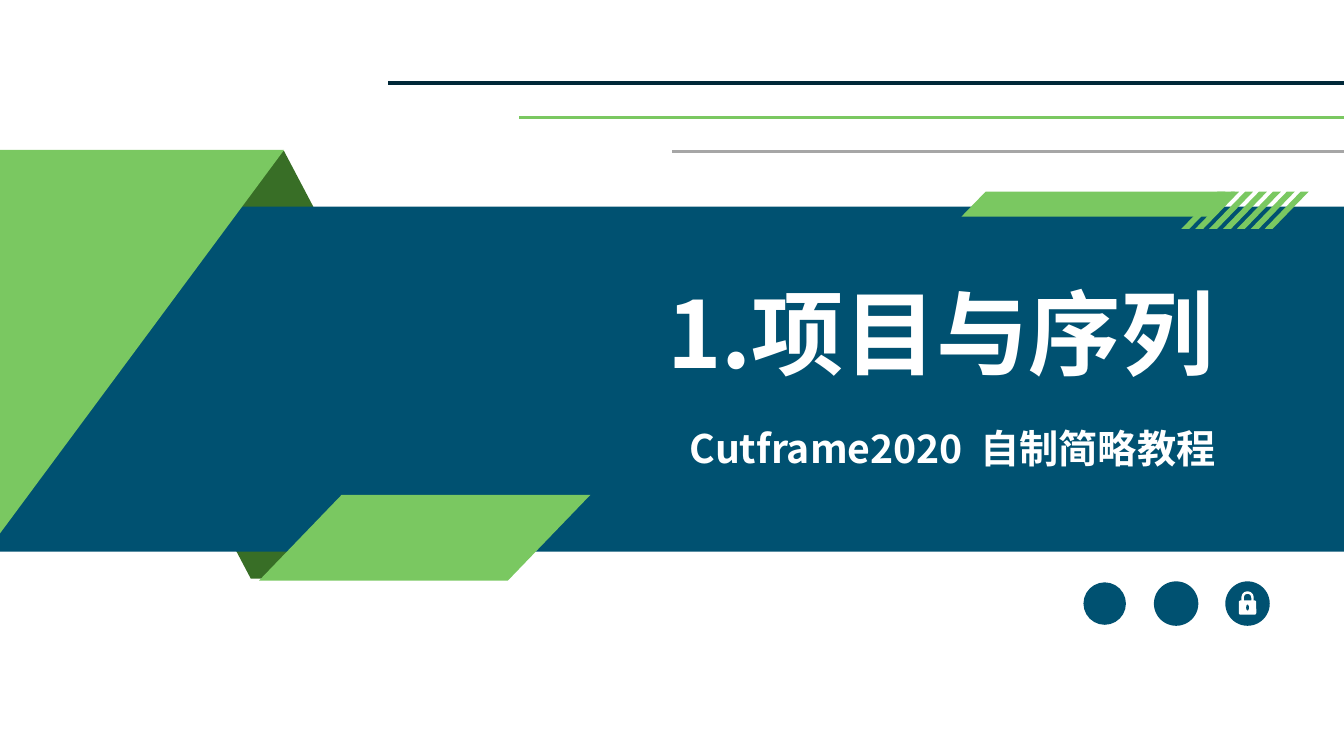
from lxml import etree
from pptx import Presentation
from pptx.dml.color import RGBColor
from pptx.enum.shapes import MSO_CONNECTOR, MSO_SHAPE
from pptx.enum.text import MSO_ANCHOR, MSO_AUTO_SIZE, PP_ALIGN
from pptx.oxml.ns import qn
from pptx.util import Cm, Pt

STRAIGHT = MSO_CONNECTOR.STRAIGHT
RECTANGLE = MSO_SHAPE.RECTANGLE
ROUNDED = MSO_SHAPE.ROUNDED_RECTANGLE
OVAL = MSO_SHAPE.OVAL
MIDDLE = MSO_ANCHOR.MIDDLE
NO_AUTOSIZE = MSO_AUTO_SIZE.NONE
RIGHT = PP_ALIGN.RIGHT

# Lengths are centimetres, text sizes and line widths points.
COLORS = {
    "blue": "005171",
    "navy": "002838",
    "green": "7AC861",
    "dark green": "386E26",
    "gray": "A6A6A6",
    "white": "FFFFFF",
}
FONT = "Noto Sans CJK SC"
SLIDE_WIDTH, SLIDE_HEIGHT = 33.87, 19.05

TITLE = "1.项目与序列"
SUBTITLE = ["Cutframe2020", " ", "自制简略教程"]
TITLE_BOX = (7.95, 6.83, 22.89, 3.07)
SUBTITLE_BOX = (14.22, 10.57, 16.66, 1.45)
WIDE_SPACE = 6.3

BAND = (0, 5.21, SLIDE_WIDTH, 8.69)
FOLD = [(0.64, 3.81), (7.16, 3.81), (12.83, 14.58), (6.32, 14.58)]
LOWER_RIBBON = [(8.61, 12.47), (14.88, 12.47), (12.8, 14.63), (6.53, 14.63)]
CORNER = [(7.16, 3.78), (-0.05, 13.51), (-0.05, 3.78)]

RULES = [(9.78, "navy"), (13.08, "green"), (16.94, "gray")]
RULE_TOP, RULE_PITCH = 2.09, 0.86

TAB = [(24.84, 4.83), (31.12, 4.83), (30.48, 5.46), (24.23, 5.46)]
STRIPE = [(30.68, 4.83), (30.88, 4.83), (29.97, 5.77), (29.77, 5.77)]
STRIPE_COUNT, STRIPE_PITCH = 7, 0.35

BADGE_DIAMETERS = [1.07, 1.12, 1.12]
BADGE_X, BADGE_Y, BADGE_PITCH = 27.84, 15.21, 1.8


def rgb(color):
    return RGBColor.from_string(COLORS[color])


def paint(shape, color):
    """Give a shape a flat fill without outline or shadow."""
    shape.fill.solid()
    shape.fill.fore_color.rgb = rgb(color)
    shape.line.fill.background()
    shape.shadow.inherit = False


def add_polygon(shapes, corners, color):
    points = [(Cm(x), Cm(y)) for x, y in corners]
    builder = shapes.build_freeform(*points[0])
    builder.add_line_segments(points[1:], close=True)
    paint(builder.convert_to_shape(), color)


def add_preset(shapes, kind, box, color):
    shape = shapes.add_shape(kind, *map(Cm, box))
    paint(shape, color)
    return shape


def centred(x, y, width, height):
    return x - width / 2, y - height / 2, width, height


def add_rule(shapes, left, y, color):
    rule = shapes.add_connector(STRAIGHT, Cm(left), Cm(y), Cm(SLIDE_WIDTH), Cm(y))
    rule.line.color.rgb = rgb(color)
    rule.line.width = Pt(2.25)
    etree.SubElement(rule.element.spPr, qn("a:effectLst"))


def add_padlock(shapes, x, y):
    shackle = add_preset(shapes, ROUNDED, centred(x, y - 0.11, 0.25, 0.34), "blue")
    shackle.adjustments[0] = 0.5
    shackle.fill.background()
    shackle.line.color.rgb = rgb("white")
    shackle.line.width = Pt(1.75)
    body = add_preset(shapes, ROUNDED, centred(x, y + 0.1, 0.44, 0.36), "white")
    body.adjustments[0] = 0.12
    add_preset(shapes, OVAL, centred(x, y + 0.1, 0.07, 0.15), "blue")


def write_line(shape, box, runs, size):
    shape.left, shape.top, shape.width, shape.height = map(Cm, box)
    frame = shape.text_frame
    frame.word_wrap = True
    frame.auto_size = NO_AUTOSIZE
    frame.vertical_anchor = MIDDLE
    paragraph = frame.paragraphs[0]
    paragraph.alignment = RIGHT
    for text in runs:
        run = paragraph.add_run()
        run.text = text
        font = run.font
        font.size = Pt(size)
        font.bold = True
        font.color.rgb = rgb("white")
        font.name = FONT
        properties = run._r.get_or_add_rPr()
        etree.SubElement(properties, qn("a:ea")).set("typeface", FONT)
        if text == " ":
            properties.set("spc", str(round(WIDE_SPACE * 100)))


def main():
    presentation = Presentation()
    presentation.slide_width = Cm(SLIDE_WIDTH)
    presentation.slide_height = Cm(SLIDE_HEIGHT)
    slide = presentation.slides.add_slide(presentation.slide_layouts[5])
    shapes = slide.shapes

    add_polygon(shapes, FOLD, "dark green")
    add_preset(shapes, RECTANGLE, BAND, "blue")
    add_polygon(shapes, LOWER_RIBBON, "green")

    # The title lies in front of the band.
    title = shapes.title
    title.element.getparent().append(title.element)
    write_line(title, TITLE_BOX, [TITLE], 66)

    for index, (left, color) in enumerate(RULES):
        add_rule(shapes, left, RULE_TOP + index * RULE_PITCH, color)

    for index, diameter in enumerate(BADGE_DIAMETERS):
        badge_x = BADGE_X + index * BADGE_PITCH
        add_preset(shapes, OVAL, centred(badge_x, BADGE_Y, diameter, diameter), "blue")
    add_padlock(shapes, badge_x, BADGE_Y)

    striped_tab = shapes.add_group_shape().shapes
    add_polygon(striped_tab, TAB, "green")
    for index in range(STRIPE_COUNT):
        shift = index * STRIPE_PITCH
        add_polygon(striped_tab, [(x + shift, y) for x, y in STRIPE], "green")

    add_polygon(shapes, CORNER, "green")
    subtitle = shapes.add_textbox(*map(Cm, SUBTITLE_BOX))
    write_line(subtitle, SUBTITLE_BOX, SUBTITLE, 28)

    presentation.save("out.pptx")


if __name__ == "__main__":
    main()
